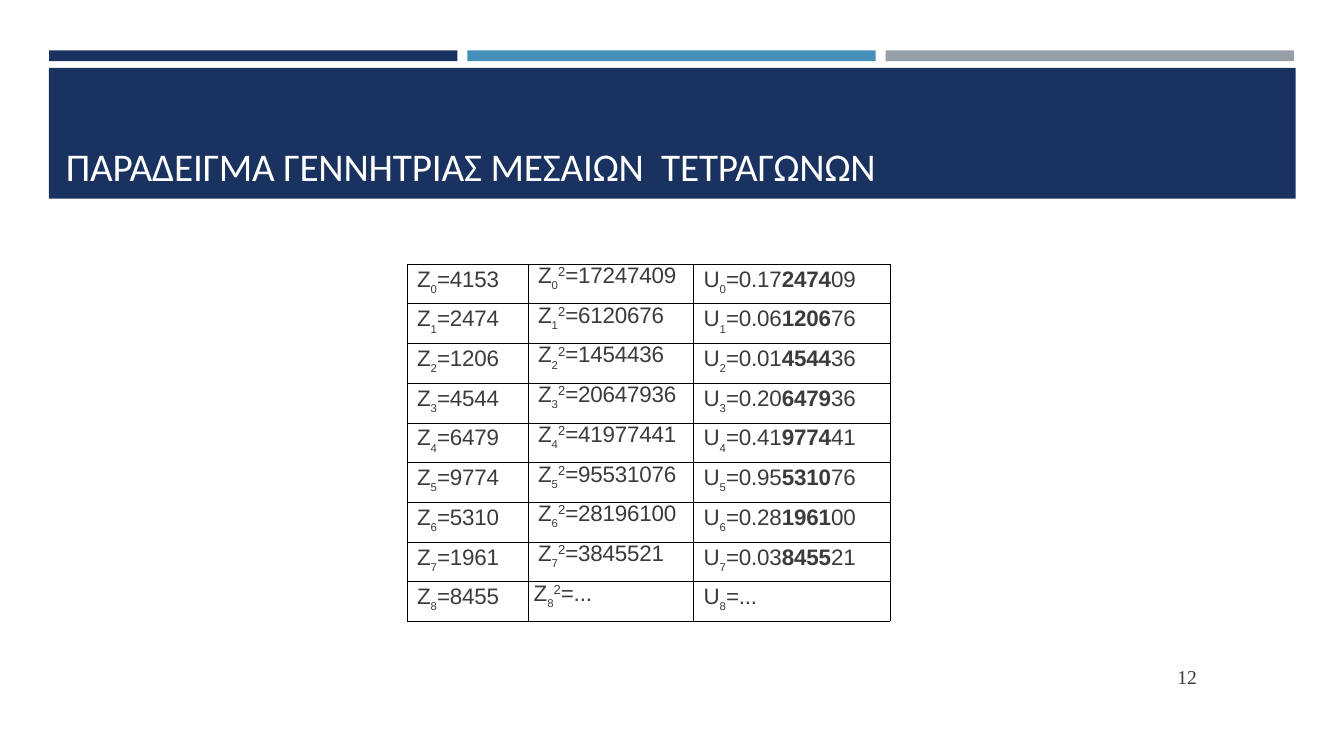
from dataclasses import dataclass

from lxml.etree import SubElement
from pptx import Presentation
from pptx.dml.color import RGBColor as Rgb
from pptx.enum.shapes import MSO_SHAPE as Preset
from pptx.enum.text import MSO_ANCHOR as Anchor
from pptx.oxml.ns import qn
from pptx.util import Cm, Pt


@dataclass(frozen=True)
class Theme:
    navy: str = "1A3260"
    blue: str = "4590B8"
    grey: str = "969FA7"
    ink: str = "3B3B3B"
    white: str = "FFFFFF"
    rule: str = "000000"
    title_size: int = 28
    body_size: int = 16
    script_size: int = 14
    title_font: str = "Calibri"
    body_font: str = "Arial"
    number_font: str = "Times New Roman"


THEME = Theme()
SUB, SUPER = -32000, 30000
SEED, STEPS = 4153, 8


def add_bar(slide, left, top, width, height, color):
    bar = slide.shapes.add_shape(Preset.RECTANGLE, Cm(left), Cm(top), Cm(width), Cm(height))
    bar.shadow.inherit = False
    bar.fill.solid()
    bar.fill.fore_color.rgb = Rgb.from_string(color)
    bar.line.fill.background()


def add_run(paragraph, text, size, font, color, bold=False, **attributes):
    run = paragraph.add_run()
    run.text = text
    run.font.size = Pt(size)
    run.font.name = font
    run.font.bold = bold
    run.font.color.rgb = Rgb.from_string(color)
    for key, value in attributes.items():
        run.font._element.set(key, str(value))


def add_label(slide, left, top, width, height, anchor, leading):
    frame = slide.shapes.add_textbox(Cm(left), Cm(top), Cm(width), Cm(height)).text_frame
    frame.word_wrap = True
    frame.vertical_anchor = anchor
    frame.margin_left = frame.margin_top = frame.margin_right = frame.margin_bottom = 0
    line = frame.paragraphs[0]
    line.line_spacing = Pt(leading)
    return line


def add_borders(cell):
    properties = cell._tc.get_or_add_tcPr()
    for side in ("a:lnL", "a:lnR", "a:lnT", "a:lnB"):
        edge = SubElement(properties, qn(side), w=str(Pt(0.25)))
        SubElement(SubElement(edge, qn("a:solidFill")), qn("a:srgbClr"), val=THEME.rule)


def fill_cell(cell, parts, indent=0.25, leading=None):
    cell.margin_left, cell.margin_top = Cm(indent), Cm(0.08)
    cell.margin_right = cell.margin_bottom = 0
    add_borders(cell)
    cell.fill.background()
    line = cell.text_frame.paragraphs[0]
    line.space_before = Pt(2)
    if leading:
        line.line_spacing = Pt(leading)
    for text, baseline, bold in parts:
        size = THEME.script_size if baseline == SUB else THEME.body_size
        add_run(line, text, size, THEME.body_font, THEME.ink, bold, baseline=baseline, spc=-10)


def term(letter, index):
    return [(letter, 0, False), (str(index), SUB, False)]


def middle_square_rows():
    value = SEED
    for index in range(STEPS + 1):
        square = value ** 2
        digits = f"{square:08d}"
        last = index == STEPS
        state = term("Ζ", index) + [(f"={value}", 0, False)]
        squared = term("Ζ", index) + [("2", SUPER, False), ("=..." if last else f"={square}", 0, False)]
        uniform = term("U", index)
        if last:
            uniform += [("=...", 0, False)]
        else:
            uniform += [(f"=0.{digits[:2]}", 0, False), (digits[2:6], 0, True), (digits[6:], 0, False)]
        yield state, squared, uniform
        value = int(digits[2:6])


def add_generator_table(slide, left, top, widths, row_height):
    rows = list(middle_square_rows())
    table = slide.shapes.add_table(
        len(rows), len(widths), Cm(left), Cm(top), Cm(sum(widths)), Cm(row_height * len(rows))
    ).table
    table.first_row = table.horz_banding = False
    for column, width in zip(table.columns, widths):
        column.width = Cm(width)
    for index, (state, squared, uniform) in enumerate(rows):
        table.rows[index].height = Cm(row_height)
        fill_cell(table.cell(index, 0), state)
        fill_cell(table.cell(index, 1), squared, 0.14 if index == STEPS else 0.25, 18)
        fill_cell(table.cell(index, 2), uniform)


def main():
    deck = Presentation()
    deck.slide_width, deck.slide_height = Cm(33.87), Cm(19.05)
    slide = deck.slides.add_slide(deck.slide_layouts[6])

    for index, color in enumerate((THEME.navy, THEME.blue, THEME.grey)):
        add_bar(slide, 1.24 + 10.54 * index, 1.27, 10.29, 0.27, color)
    add_bar(slide, 1.23, 1.71, 31.42, 3.3, THEME.navy)

    title = add_label(slide, 1.66, 1.96, 30.63, 2.82, Anchor.BOTTOM, 44.6)
    add_run(title, "Παράδειγμα γεννήτριας μεσαίων  τετραγώνων", THEME.title_size,
            THEME.title_font, THEME.white, cap="all", spc=-10)

    add_generator_table(slide, 10.26, 6.65, (3.05, 4.17, 4.95), 1)

    number = add_label(slide, 29.67, 16.54, 2.59, 1.02, Anchor.MIDDLE, 16.3)
    add_run(number, "12", THEME.number_size if hasattr(THEME, "number_size") else THEME.script_size,
            THEME.number_font, THEME.ink)

    deck.save("out.pptx")


if __name__ == "__main__":
    main()
